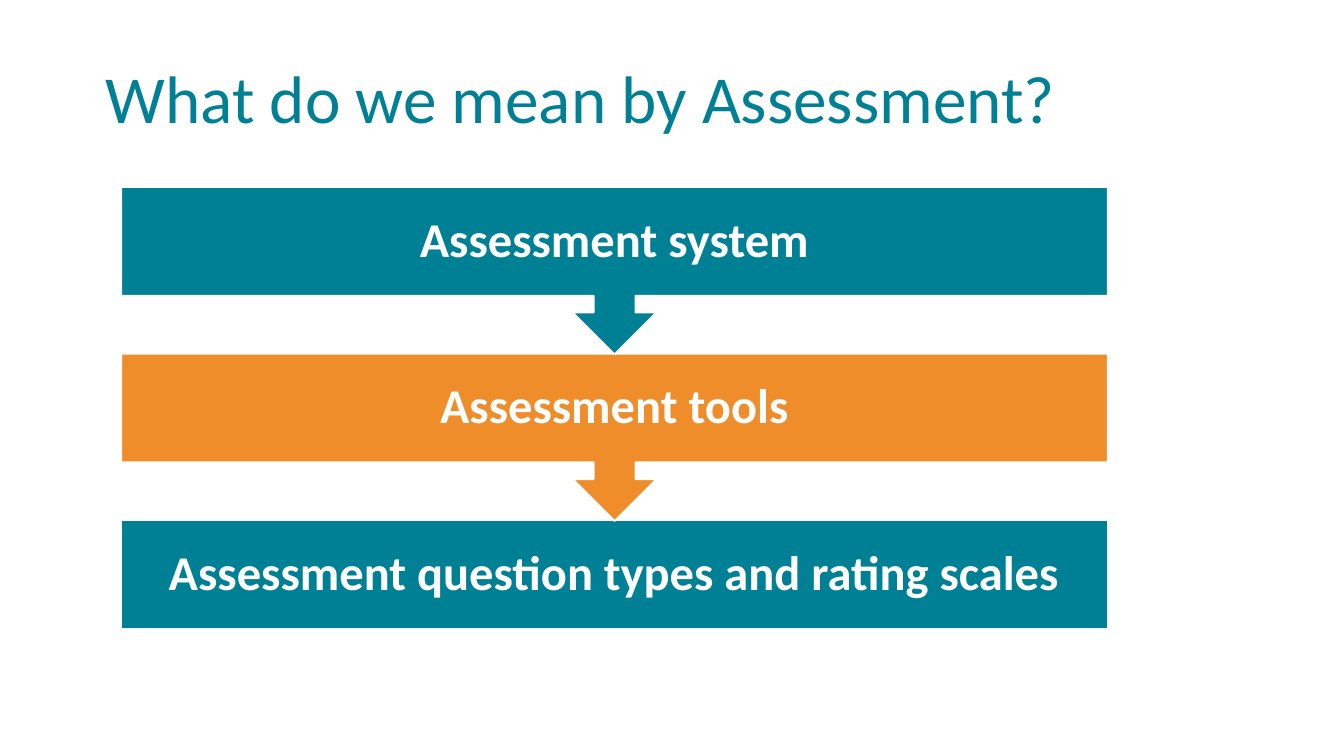
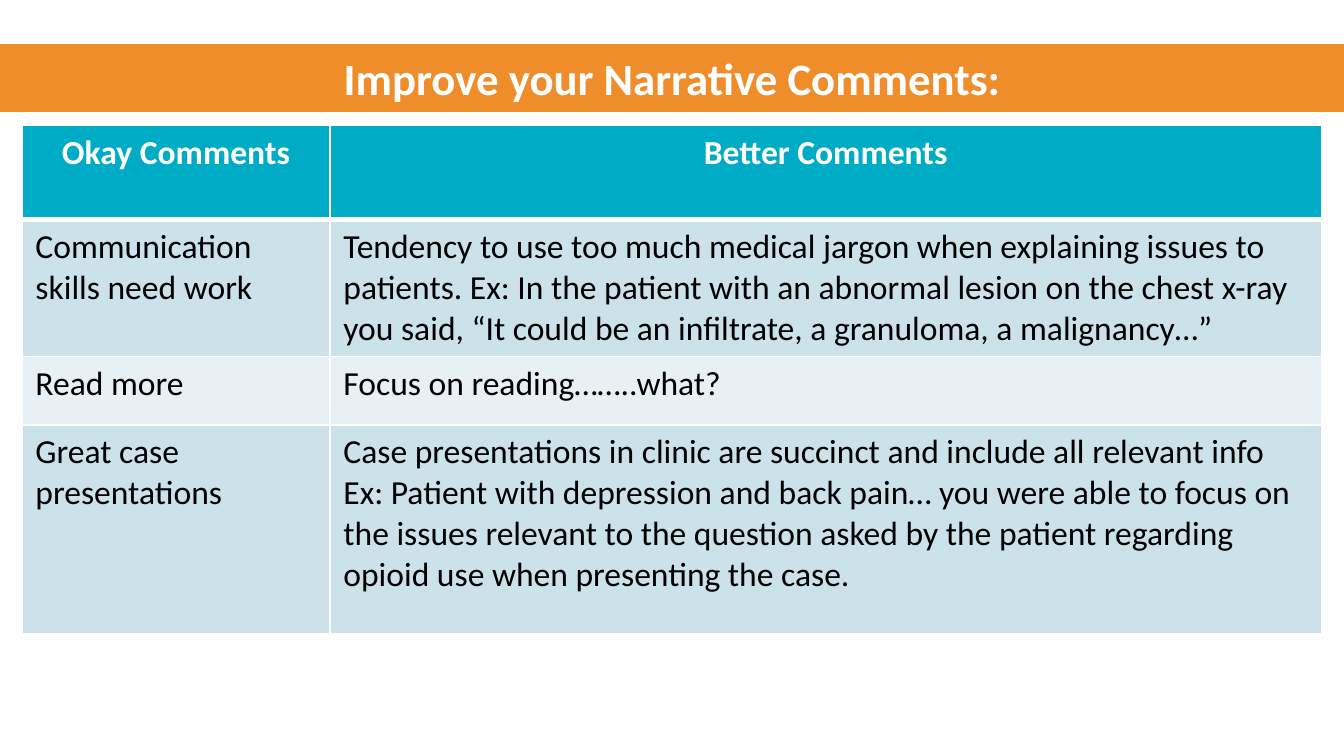
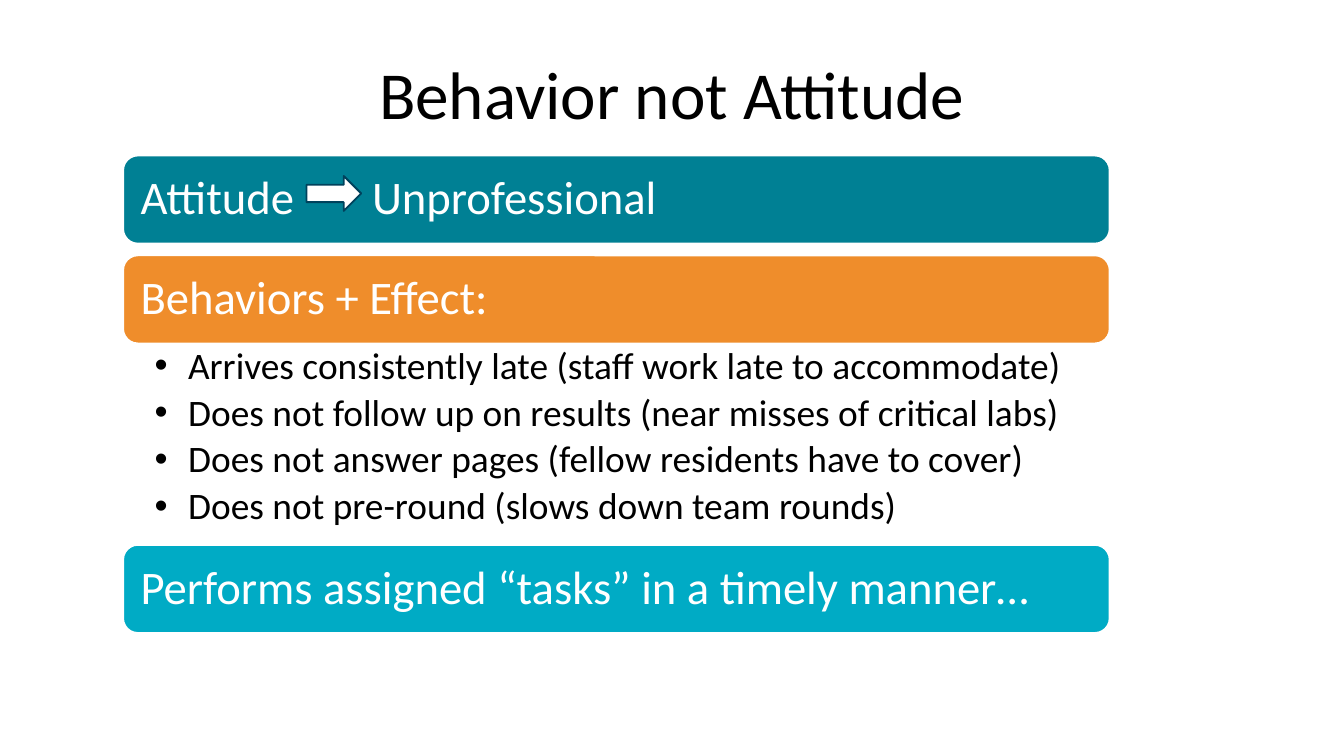
from lxml.etree import SubElement
from pptx import Presentation
from pptx.dml.color import RGBColor
from pptx.enum.shapes import MSO_SHAPE
from pptx.enum.text import MSO_ANCHOR, MSO_AUTO_SIZE, PP_ALIGN
from pptx.oxml.ns import qn
from pptx.util import Pt

FONT = "Calibri"
HUES = {
    "teal": "008094",
    "orange": "EF8D2B",
    "aqua": "00ABC5",
    "navy": "00425C",
    "pale": "CCE2EA",
    "mist": "E7F1F5",
    "white": "FFFFFF",
    "black": "000000",
}
LEFT, WIDE = 66, 528.5  # column of bars on slide 3


def hue(name):
    return RGBColor.from_string(HUES[name])


def write(frame, text, size=18, color="white", bold=False, align=PP_ALIGN.LEFT,
          lines=1, after=0, inset=None, anchor=MSO_ANCHOR.MIDDLE,
          bullet=False, tab=None):
    """Fill a text frame, one paragraph for each line of text."""
    frame.word_wrap = True
    frame.auto_size = MSO_AUTO_SIZE.NONE
    frame.vertical_anchor = anchor
    if inset:
        (frame.margin_left, frame.margin_top,
         frame.margin_right, frame.margin_bottom) = map(Pt, inset)
    style(frame, text, size, color, bold, align, lines, after, bullet, tab)


def style(frame, text, size, color, bold, align, lines=1, after=0,
          bullet=False, tab=None):
    frame.text = text
    for para in frame.paragraphs:
        props = para._p.get_or_add_pPr()
        para.alignment = align
        para.line_spacing = lines
        para.space_before = Pt(0)
        para.space_after = Pt(after)
        if bullet:
            props.set("marL", str(Pt(18)))
            props.set("indent", str(-Pt(18)))
            SubElement(props, qn("a:buFont"), typeface="Arial")
            SubElement(props, qn("a:buChar"), char="•")
        if tab:
            stops = SubElement(props, qn("a:tabLst"))
            SubElement(stops, qn("a:tab"), pos=str(Pt(tab)), algn="l")
        font = para.font
        font.name, font.size, font.bold = FONT, Pt(size), bold
        font.color.rgb = hue(color)


def title(deck, text, box, fill=None, **form):
    """Add a title-only slide and place its title."""
    slide = deck.slides.add_slide(deck.slide_layouts[5])
    head = slide.shapes.title
    head.left, head.top, head.width, head.height = map(Pt, box)
    if fill:
        head.fill.solid()
        head.fill.fore_color.rgb = hue(fill)
    write(head.text_frame, text, **form)
    return slide


def block(slide, kind, box, fill, line="white", text=None, **form):
    shape = slide.shapes.add_shape(kind, *map(Pt, box))
    shape.shadow.inherit = False
    shape.fill.solid()
    shape.fill.fore_color.rgb = hue(fill)
    shape.line.color.rgb = hue(line)
    shape.line.width = Pt(1)
    if text:
        write(shape.text_frame, text, **form)


def edge(cell, side, width):
    line = SubElement(cell._tc.get_or_add_tcPr(), qn("a:" + side), w=str(Pt(width)))
    fill = SubElement(line, qn("a:solidFill"))
    SubElement(fill, qn("a:srgbClr"), val=HUES["white"])


def grid(slide, rows, spot, wides, highs):
    """Add a table with a header row and banded body rows."""
    frame = slide.shapes.add_table(len(rows), len(wides), *map(Pt, spot),
                                   Pt(sum(wides)), Pt(sum(highs)))
    table = frame.table
    for col, wide in zip(table.columns, wides):
        col.width = Pt(wide)
    for r, (row, high) in enumerate(zip(rows, highs)):
        table.rows[r].height = Pt(high)
        top = r == 0
        fill = "aqua" if top else ("mist", "pale")[r % 2]
        for c, text in enumerate(row):
            cell = table.cell(r, c)
            for side in ("lnL", "lnR", "lnT", "lnB"):
                heavy = (top and side == "lnB") or (r == 1 and side == "lnT")
                edge(cell, side, 3 if heavy else 1)
            cell.fill.solid()
            cell.fill.fore_color.rgb = hue(fill)
            style(cell.text_frame, text, 18, "white" if top else "black", top,
                  PP_ALIGN.CENTER if top else PP_ALIGN.LEFT)


def chain(deck):
    slide = title(deck, "What do we mean by Assessment?", (49.5, 21.75, 621, 65.25),
                  size=36, color="teal", lines=0.9)
    # Boxes that point down to the next one, drawn from the last upward
    steps = [
        ("Assessment system", "teal"),
        ("Assessment tools", "orange"),
        ("Assessment question types and rating scales", "teal"),
    ]
    last = len(steps) - 1
    for i in range(last, -1, -1):
        text, fill = steps[i]
        kind = MSO_SHAPE.RECTANGLE if i == last else MSO_SHAPE.DOWN_ARROW_CALLOUT
        high = 58.3 if i == last else 89.7
        block(slide, kind, (65, 100.2 + 89.3 * i, WIDE, high), fill, text=text,
              size=26, bold=True, align=PP_ALIGN.CENTER, lines=0.9,
              inset=(14.4, 14.4, 14.4, 14.4))


def notes(deck):
    slide = title(deck, "Improve your Narrative Comments:", (0, 23.6, 720, 36.35),
                  fill="orange", size=24, bold=True, align=PP_ALIGN.CENTER)
    # Comment table
    rows = [
        ("Okay Comments", "Better Comments"),
        ("Communication skills need work",
         "Tendency to use too much medical jargon when explaining issues to "
         "patients. Ex: In the patient with an abnormal lesion on the chest x-ray "
         "you said, “It could be an infiltrate, a granuloma, a malignancy…”"),
        ("Read more", "Focus on reading……..what?"),
        ("Great case presentations",
         "Case presentations in clinic are succinct and include all relevant info "
         "Ex: Patient with depression and back pain… you were able to focus on "
         "the issues relevant to the question asked by the patient regarding "
         "opioid use when presenting the case."),
    ]
    grid(slide, rows, (11.8, 67.3), (165, 531.2), (50.5, 73, 36.7, 112))


def habits(deck):
    slide = title(deck, "Behavior not Attitude", (49.5, 21.6, 621, 61.2),
                  size=36, color="black", align=PP_ALIGN.CENTER, lines=0.9)
    # Bars
    bars = [
        (83.3, "teal", "Attitude\tUnprofessional", 124),
        (136.8, "orange", "Behaviors + Effect:", None),
        (291.9, "aqua", "Performs assigned “tasks” in a timely manner…", None),
    ]
    for top, fill, text, tab in bars:
        block(slide, MSO_SHAPE.ROUNDED_RECTANGLE, (LEFT, top, WIDE, 47.2), fill,
              text=text, size=25, lines=0.9, inset=(7.2, 7.2, 7.2, 7.2), tab=tab)
    # Bullets
    items = [
        "Arrives consistently late (staff work late to accommodate)",
        "Does not follow up on results (near misses of critical labs)",
        "Does not answer pages (fellow residents have to cover)",
        "Does not pre-round (slows down team rounds)",
    ]
    area = slide.shapes.add_textbox(*map(Pt, (LEFT, 183.9, WIDE, 108)))
    write(area.text_frame, "\n".join(items), size=20, color="black", lines=0.9,
          after=3.5, inset=(16.8, 2, 13.7, 2), anchor=MSO_ANCHOR.TOP, bullet=True)
    # Arrow between the words
    block(slide, MSO_SHAPE.RIGHT_ARROW, (164.2, 94.3, 29.3, 18.7), "white", line="navy")


def main():
    deck = Presentation()
    deck.slide_width, deck.slide_height = Pt(720), Pt(405)
    chain(deck)
    notes(deck)
    habits(deck)
    deck.save("out.pptx")


if __name__ == "__main__":
    main()
